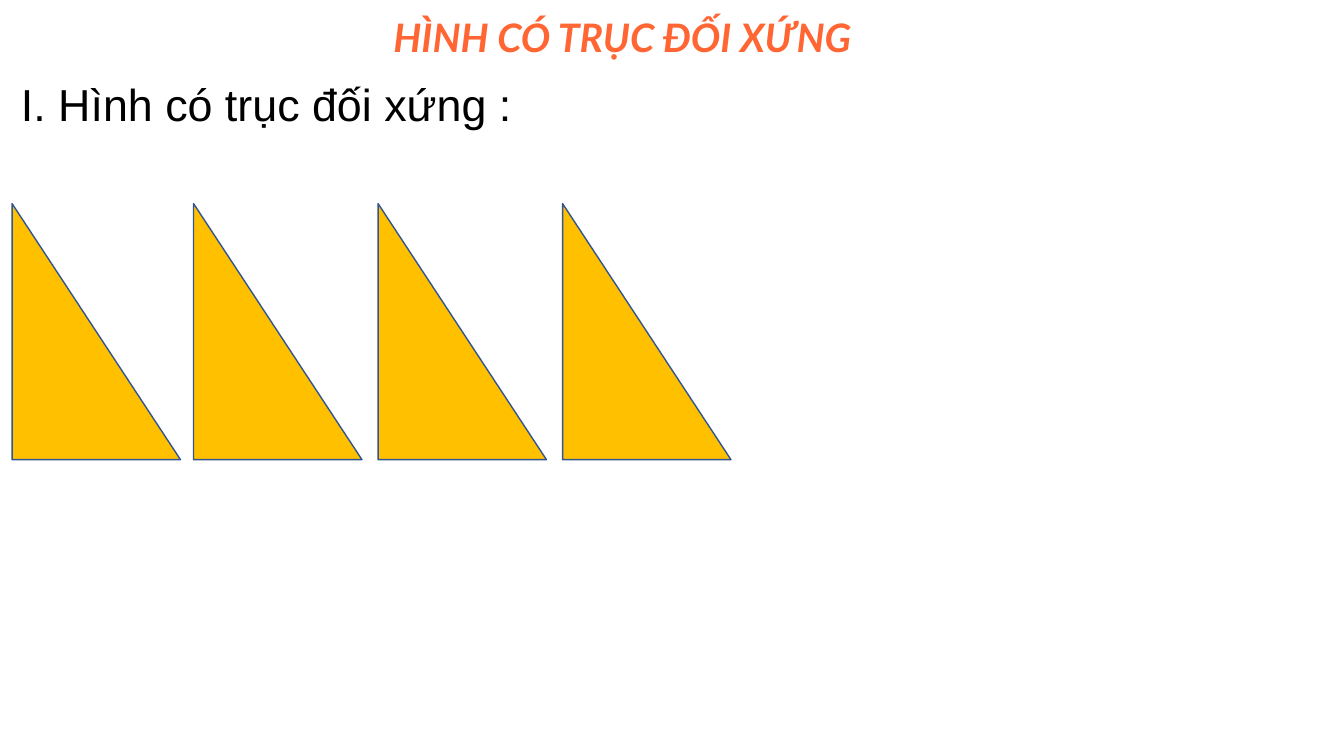
from pptx import Presentation
from pptx.dml.color import RGBColor
from pptx.enum.shapes import MSO_SHAPE as Shape
from pptx.enum.text import MSO_ANCHOR as Anchor, MSO_AUTO_SIZE as Auto, PP_ALIGN as Align
from pptx.util import Inches, Pt

ORANGE = RGBColor(0xFF, 0x66, 0x33)
BLACK = RGBColor(0x00, 0x00, 0x00)
GOLD = RGBColor(0xFF, 0xC0, 0x00)
BLUE = RGBColor(0x32, 0x54, 0x91)


def write(box, text, font, size, color, align, bold=False):
    frame = box.text_frame
    frame.auto_size = Auto.NONE
    frame.word_wrap = True
    frame.vertical_anchor = Anchor.TOP
    para = frame.paragraphs[0]
    para.alignment = align
    run = para.add_run()
    run.text = text
    run.font.name = font
    run.font.size = Pt(size)
    run.font.bold = run.font.italic = bold
    run.font.color.rgb = color


def add_title(slide):
    title = slide.shapes.title
    title.left, title.top = Inches(1.41), Inches(0.08)
    title.width, title.height = Inches(9.61), Inches(0.58)
    write(title, "HÌNH CÓ TRỤC ĐỐI XỨNG ", "Lato", 28, ORANGE, Align.CENTER, True)


def add_head(slide):
    head = slide.shapes.add_textbox(Inches(0.11), Inches(0.71), Inches(5.41), Inches(0.64))
    write(head, "I. Hình có trục đối xứng :", "Arial", 32, BLACK, Align.LEFT)


def add_wedge(slide, left):
    wedge = slide.shapes.add_shape(
        Shape.RIGHT_TRIANGLE, Inches(left), Inches(2.02), Inches(1.67), Inches(2.54))
    wedge.shadow.inherit = False
    wedge.fill.solid()
    wedge.fill.fore_color.rgb = GOLD
    wedge.line.color.rgb = BLUE
    wedge.line.width = Pt(1)


def main():
    deck = Presentation()
    deck.slide_width, deck.slide_height = Inches(13.33), Inches(7.5)
    slide = deck.slides.add_slide(deck.slide_layouts[5])
    for left in (0.12, 1.92, 3.75, 5.58):
        add_wedge(slide, left)
    add_title(slide)
    add_head(slide)
    deck.save("out.pptx")


if __name__ == "__main__":
    main()
